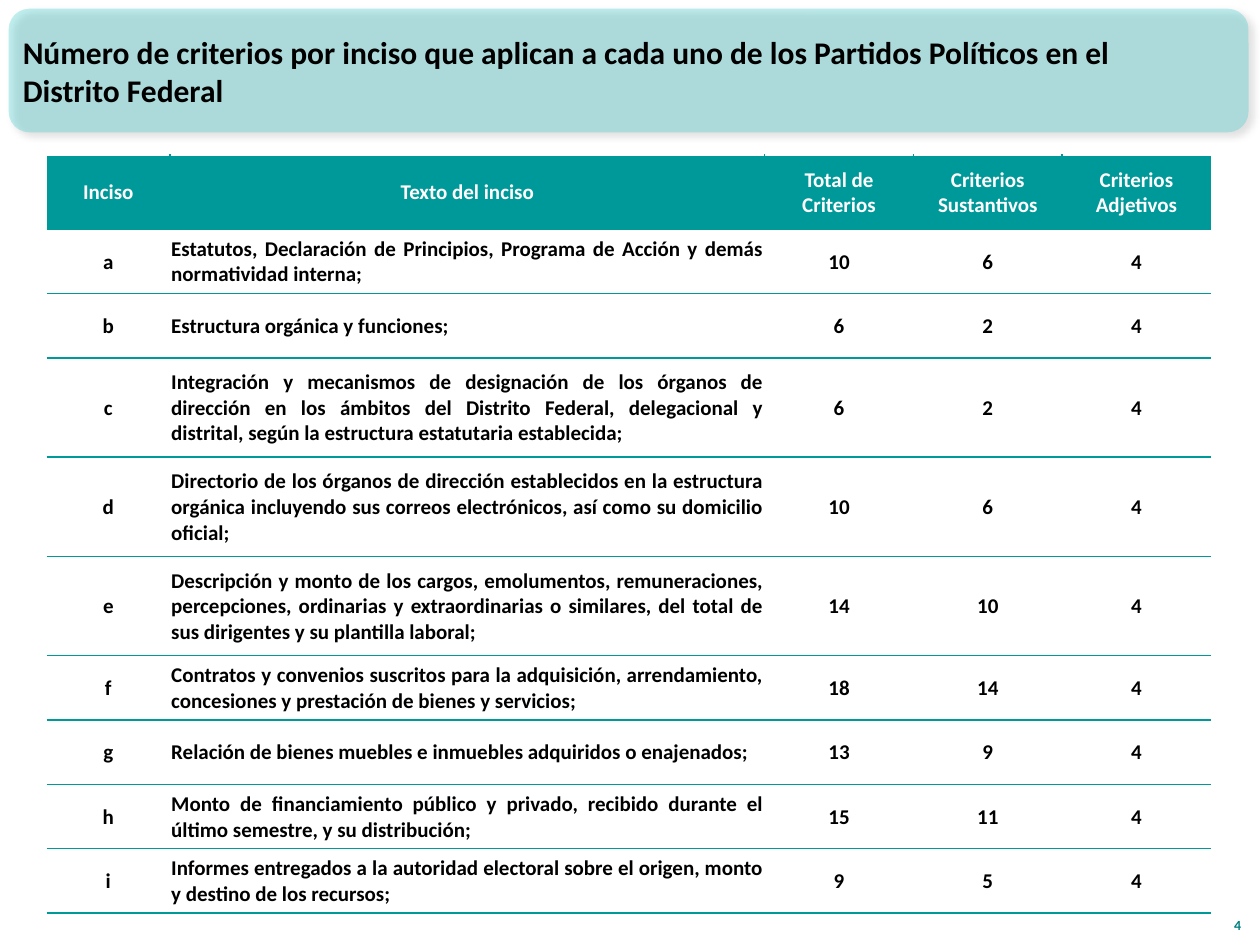
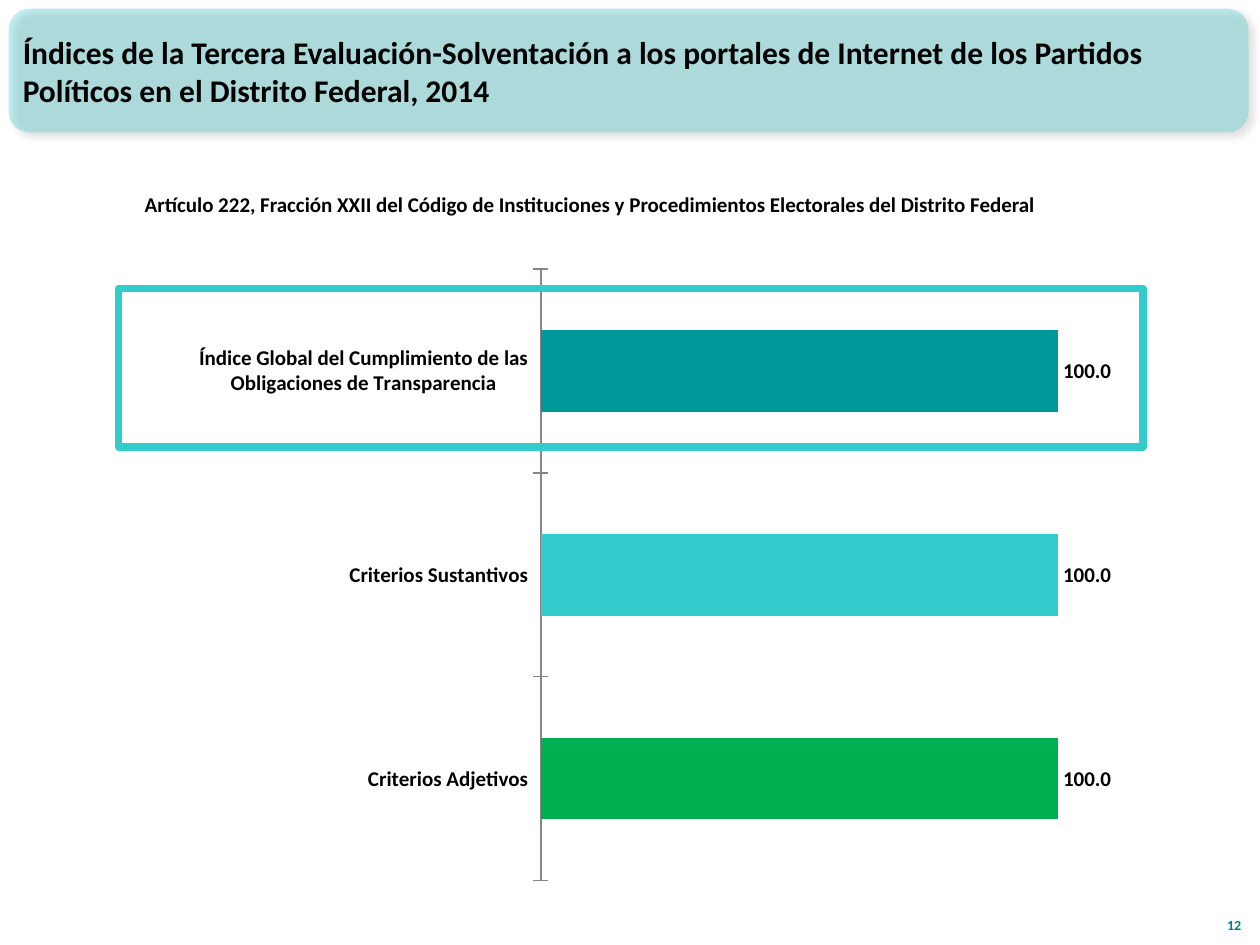
from lxml import etree
from pptx import Presentation
from pptx.chart.data import CategoryChartData
from pptx.dml.color import RGBColor
from pptx.enum import chart as kinds, shapes, text
from pptx.oxml.ns import qn
from pptx.util import Pt

FONT = "Calibri"
TEAL, TURQUOISE, GREEN = "009999", "33CCCC", "00B050"
BLACK, WHITE, GREY, NUMBER_TEAL = "000000", "FFFFFF", "868686", "008080"
LEFT, CENTER = text.PP_ALIGN.LEFT, text.PP_ALIGN.CENTER
RIGHT, JUSTIFY = text.PP_ALIGN.RIGHT, text.PP_ALIGN.JUSTIFY
MIDDLE, BOTTOM = text.MSO_ANCHOR.MIDDLE, text.MSO_ANCHOR.BOTTOM


def color(value):
    return RGBColor.from_string(value)


def write(frame, words, size, ink, align, anchor):
    frame.word_wrap = True
    frame.vertical_anchor = anchor
    para = frame.paragraphs[0]
    para.alignment = align
    span = para.add_run()
    span.text = words
    span.font.name, span.font.size, span.font.bold = FONT, Pt(size), True
    span.font.color.rgb = color(ink)


deck = Presentation()
deck.slide_width, deck.slide_height = Pt(720), Pt(540)
layout = deck.slide_layouts[5]

# Titles and page numbers
pages = []
for title, number in [
    ("Número de criterios por inciso que aplican a cada uno de los Partidos "
     "Políticos en el Distrito Federal", "4"),
    ("Índices de la Tercera Evaluación-Solventación a los portales de Internet "
     "de los Partidos Políticos en el Distrito Federal, 2014", "12"),
]:
    page = deck.slides.add_slide(layout)
    box = page.shapes.title
    box.left, box.top, box.width, box.height = Pt(5.8), Pt(6.5), Pt(660), Pt(67.7)
    write(box.text_frame, title, 18, BLACK, LEFT, MIDDLE)
    box = page.shapes.add_textbox(Pt(687.6), Pt(508.3), Pt(28.8), Pt(28.8))
    write(box.text_frame, number, 8, NUMBER_TEAL, RIGHT, BOTTOM)
    pages.append(page)
table_page, chart_page = pages

# Title band, moved to the layout so that both slides share it
band = table_page.shapes.add_shape(
    shapes.MSO_SHAPE.ROUNDED_RECTANGLE, Pt(5), Pt(5), Pt(708.5), Pt(70.6))
band.fill.solid()
band.fill.fore_color.rgb = color(TURQUOISE)
band.line.fill.background()
band.shadow.inherit = False
properties = band.element.spPr
fill_color = properties.find(qn("a:solidFill")).find(qn("a:srgbClr"))
etree.SubElement(fill_color, qn("a:alpha"), val="30000")
shadow = etree.SubElement(
    properties.find(qn("a:effectLst")), qn("a:outerShdw"),
    blurRad=str(Pt(4)), dist=str(Pt(3)), dir="2700000", algn="tl", rotWithShape="0")
shadow_color = etree.SubElement(shadow, qn("a:srgbClr"), val=BLACK)
etree.SubElement(shadow_color, qn("a:alpha"), val="40000")
layout.shapes.element.insert(2, band.element)

# Table of criteria
rows = [
    ("Inciso", "Texto del inciso", "Total de Criterios", "Criterios Sustantivos",
     "Criterios Adjetivos"),
    ("a", "Estatutos, Declaración de Principios, Programa de Acción y demás "
     "normatividad interna;", "10", "6", "4"),
    ("b", "Estructura orgánica y funciones;", "6", "2", "4"),
    ("c", "Integración y mecanismos de designación de los órganos de dirección en los "
     "ámbitos del Distrito Federal, delegacional y distrital, según la estructura "
     "estatutaria establecida;", "6", "2", "4"),
    ("d", "Directorio de los órganos de dirección establecidos en la estructura orgánica "
     "incluyendo sus correos electrónicos, así como su domicilio oficial;",
     "10", "6", "4"),
    ("e", "Descripción y monto de los cargos, emolumentos, remuneraciones, percepciones, "
     "ordinarias y extraordinarias o similares, del total de sus dirigentes y su "
     "plantilla laboral;", "14", "10", "4"),
    ("f", "Contratos y convenios suscritos para la adquisición, arrendamiento, "
     "concesiones y prestación de bienes y servicios;", "18", "14", "4"),
    ("g", "Relación de bienes muebles e inmuebles adquiridos o enajenados;",
     "13", "9", "4"),
    ("h", "Monto de financiamiento público y privado, recibido durante el último "
     "semestre, y su distribución;", "15", "11", "4"),
    ("i", "Informes entregados a la autoridad electoral sobre el origen, monto y destino "
     "de los recursos;", "9", "5", "4"),
]
widths = [70.6, 339.8, 85, 85, 85]
heights = [42.3] + [56.7 if row[0] in "cde" else 36.8 for row in rows[1:]]
table = table_page.shapes.add_table(
    len(rows), len(widths), Pt(26.6), Pt(88.6), Pt(sum(widths)), Pt(sum(heights))).table
table.horz_banding = False
for column, width in zip(table.columns, widths):
    column.width = Pt(width)
for r, (row, height) in enumerate(zip(rows, heights)):
    table.rows[r].height = Pt(height)
    header = r == 0
    for c, words in enumerate(row):
        cell = table.cell(r, c)
        cell.margin_left = cell.margin_right = cell.margin_top = Pt(0.7)
        cell.margin_bottom = 0
        cell.vertical_anchor = MIDDLE
        justified = c == 1 and not header
        write(cell.text_frame, words, 12, WHITE if header else BLACK,
              JUSTIFY if justified else CENTER, MIDDLE)
        borders = {
            "a:lnL": TEAL if header and c > 0 else None,
            "a:lnR": TEAL if header and c < len(row) - 1 else None,
            "a:lnT": WHITE if header else TEAL,
            "a:lnB": TEAL,
        }
        for side, ink in borders.items():
            line = etree.SubElement(
                cell._tc.get_or_add_tcPr(), qn(side), w=str(Pt(1)))
            if ink:
                paint = etree.SubElement(line, qn("a:solidFill"))
                etree.SubElement(paint, qn("a:srgbClr"), val=ink)
            else:
                etree.SubElement(line, qn("a:noFill"))
        if header:
            cell.fill.solid()
            cell.fill.fore_color.rgb = color(TEAL)
        else:
            cell.fill.background()

# Bar chart of indices
data = CategoryChartData(number_format="0.0")
data.categories = ["Índice Global del Cumplimiento de las Obligaciones de Transparencia",
                   "Criterios Sustantivos", "Criterios Adjetivos"]
data.add_series("Series 1", [100, 100, 100])
chart = chart_page.shapes.add_chart(
    kinds.XL_CHART_TYPE.BAR_CLUSTERED, Pt(69.1), Pt(142.6), Pt(579.6), Pt(371.5),
    data).chart
chart.has_legend = chart.has_title = False
chart.font.name, chart.font.size, chart.font.bold = FONT, Pt(12), True
chart.font.color.rgb = color(BLACK)

categories = chart.category_axis
categories.reverse_order = True
categories.has_major_gridlines = False
categories.major_tick_mark = kinds.XL_TICK_MARK.CROSS
categories.format.line.color.rgb = color(GREY)
values = chart.value_axis
values.minimum_scale, values.maximum_scale = 0, 100
values.has_major_gridlines = False
values.visible = False

plot = chart.plots[0]
plot.gap_width, plot.overlap, plot.vary_by_categories = 150, -25, False
plot.has_data_labels = True
labels = plot.data_labels
labels.show_value = True
labels.number_format, labels.number_format_is_linked = "0.0", False
labels.position = kinds.XL_LABEL_POSITION.OUTSIDE_END
series = plot.series[0]
series.format.fill.solid()
series.format.fill.fore_color.rgb = color(TEAL)
for index, ink in [(1, TURQUOISE), (2, GREEN)]:
    bar = series.points[index].format.fill
    bar.solid()
    bar.fore_color.rgb = color(ink)

# Fixed plot area
area = chart.element.xpath("c:chart/c:plotArea")[0]
for automatic in area.findall(qn("c:layout")):
    area.remove(automatic)
placement = etree.Element(qn("c:layout"))
area.insert(0, placement)
manual = etree.SubElement(placement, qn("c:manualLayout"))
for tag, setting in [("layoutTarget", "inner"), ("xMode", "edge"), ("yMode", "edge"),
                     ("x", "0.414"), ("y", "0.03"), ("w", "0.51"), ("h", "0.941")]:
    etree.SubElement(manual, qn("c:" + tag), val=setting)

# Frame around the global index
frame = chart_page.shapes.add_shape(
    shapes.MSO_SHAPE.RECTANGLE, Pt(67.7), Pt(164.9), Pt(585.4), Pt(90.7))
frame.shadow.inherit = False
frame.fill.background()
frame.line.color.rgb = color(TURQUOISE)
frame.line.width = Pt(4.25)
etree.SubElement(frame.element.spPr.find(qn("a:ln")), qn("a:round"))

# Legal reference above the chart
box = chart_page.shapes.add_textbox(Pt(75.6), Pt(105.8), Pt(568), Pt(21.8))
write(box.text_frame, "Artículo 222, Fracción XXII del Código de Instituciones y "
      "Procedimientos Electorales del Distrito Federal", 12, BLACK, LEFT,
      text.MSO_ANCHOR.TOP)

deck.save("out.pptx")
